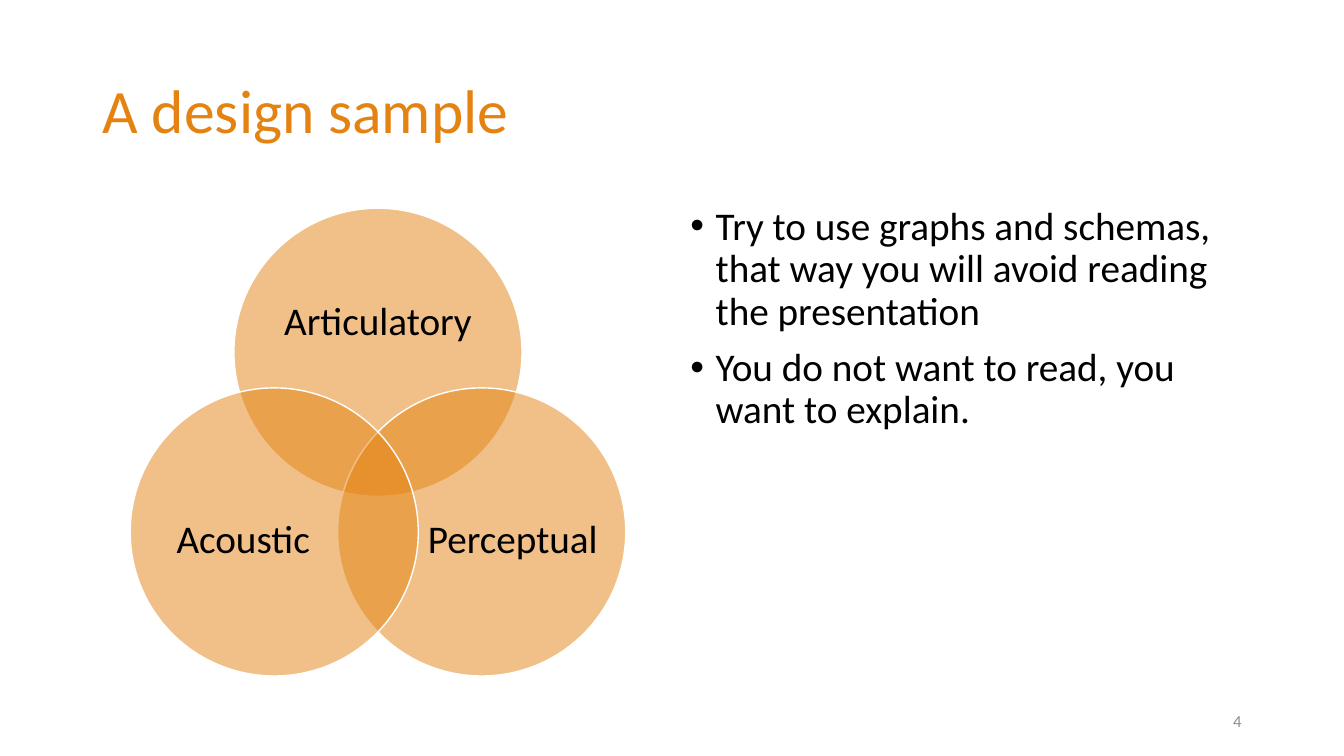
import math

from lxml import etree
from pptx import Presentation
from pptx import util as u
from pptx.dml.color import RGBColor
from pptx.enum import shapes, text
from pptx.oxml.ns import qn

ORANGE = RGBColor(0xE4, 0x83, 0x12)
BLACK = RGBColor(0, 0, 0)
WHITE = RGBColor(0xFF, 0xFF, 0xFF)
GREY = RGBColor(0x8C, 0x8C, 0x8C)

# The grid has square cells of a twelfth of an inch
COLUMNS, ROWS = 160, 90
CELL = u.Inches(1) / 12

# Three circles set evenly around one centre, in cells
VENN_CENTRE = (45, 56.2)
VENN_REACH = 14.26
CIRCLE_RADIUS = 17.15
# Name, angle of the circle, label offset from its centre, label size
VENN_PARTS = [
    ("Articulatory", -90, (0, -3.5), (25, 15.4)),
    ("Perceptual", 30, (3.7, 1), (20.5, 18.8)),
    ("Acoustic", 150, (-3.7, 1), (20.5, 18.8)),
]
ADVICE = [
    "Try to use graphs and schemas, that way you will avoid reading the presentation",
    "You do not want to read, you want to explain.",
]


def cells(*counts):
    return [round(count * CELL) for count in counts]


class SlideBuilder:
    """Holds the style and the current slide."""

    font_name = "Calibri"

    def __init__(self, deck):
        self.page = deck.slides.add_slide(deck.slide_layouts[1])

    def set_text(self, box, lines, size, color, align, spacing=0.9, before=0,
                 anchor=text.MSO_ANCHOR.MIDDLE):
        frame = box.text_frame
        frame.text = "\n".join(lines)
        frame.word_wrap = True
        frame.auto_size = text.MSO_AUTO_SIZE.NONE
        frame.vertical_anchor = anchor
        for para in frame.paragraphs:
            para.alignment = align
            para.line_spacing = spacing
            para.space_before = u.Pt(before)
            para.font.name = self.font_name
            para.font.size = u.Pt(size)
            para.font.color.rgb = color

    def place(self, box, area):
        box.left, box.top, box.width, box.height = cells(*area)

    def title(self, words, area):
        box = self.page.shapes.title
        self.place(box, area)
        self.set_text(box, [words], 44, ORANGE, text.PP_ALIGN.LEFT)

    def bullets(self, lines, area):
        box = self.page.placeholders[1]
        self.place(box, area)
        self.set_text(box, lines, 28, BLACK, text.PP_ALIGN.LEFT, before=10,
                      anchor=text.MSO_ANCHOR.TOP)
        for para in box.text_frame.paragraphs:
            props = para._p.get_or_add_pPr()
            props.set("marL", str(u.Inches(0.25)))
            props.set("indent", str(-u.Inches(0.25)))

    def circle(self, x, y, radius):
        area = cells(x - radius, y - radius, 2 * radius, 2 * radius)
        disc = self.page.shapes.add_shape(shapes.MSO_SHAPE.OVAL, *area)
        disc.shadow.inherit = False
        disc.fill.solid()
        disc.fill.fore_color.rgb = ORANGE
        color = disc._element.spPr.find(".//" + qn("a:srgbClr"))
        etree.SubElement(color, qn("a:alpha")).set("val", "50000")
        disc.line.color.rgb = WHITE
        disc.line.width = u.Pt(1)

    def label(self, words, x, y, width, height):
        area = cells(x - width / 2, y - height / 2, width, height)
        box = self.page.shapes.add_textbox(*area)
        frame = box.text_frame
        frame.margin_left = frame.margin_right = 0
        frame.margin_top = frame.margin_bottom = 0
        self.set_text(box, [words], 28, BLACK, text.PP_ALIGN.CENTER)

    def page_number(self, number, area):
        box = self.page.shapes.add_textbox(*cells(*area))
        self.set_text(box, [number], 12, GREY, text.PP_ALIGN.RIGHT, spacing=1)


def main():
    deck = Presentation()
    deck.slide_width, deck.slide_height = cells(COLUMNS, ROWS)
    slide = SlideBuilder(deck)

    # Title and advice
    slide.title("A design sample", (11, 4.8, 138, 17.4))
    slide.bullets(ADVICE, (81, 24, 68, 57.1))

    # Venn diagram
    for name, angle, (shift_x, shift_y), size in VENN_PARTS:
        x = VENN_CENTRE[0] + VENN_REACH * math.cos(math.radians(angle))
        y = VENN_CENTRE[1] + VENN_REACH * math.sin(math.radians(angle))
        slide.circle(x, y, CIRCLE_RADIUS)
        slide.label(name, x + shift_x, y + shift_y, *size)

    # Footer
    slide.page_number("4", (113, 83.4, 36, 4.8))
    deck.save("out.pptx")


if __name__ == "__main__":
    main()
